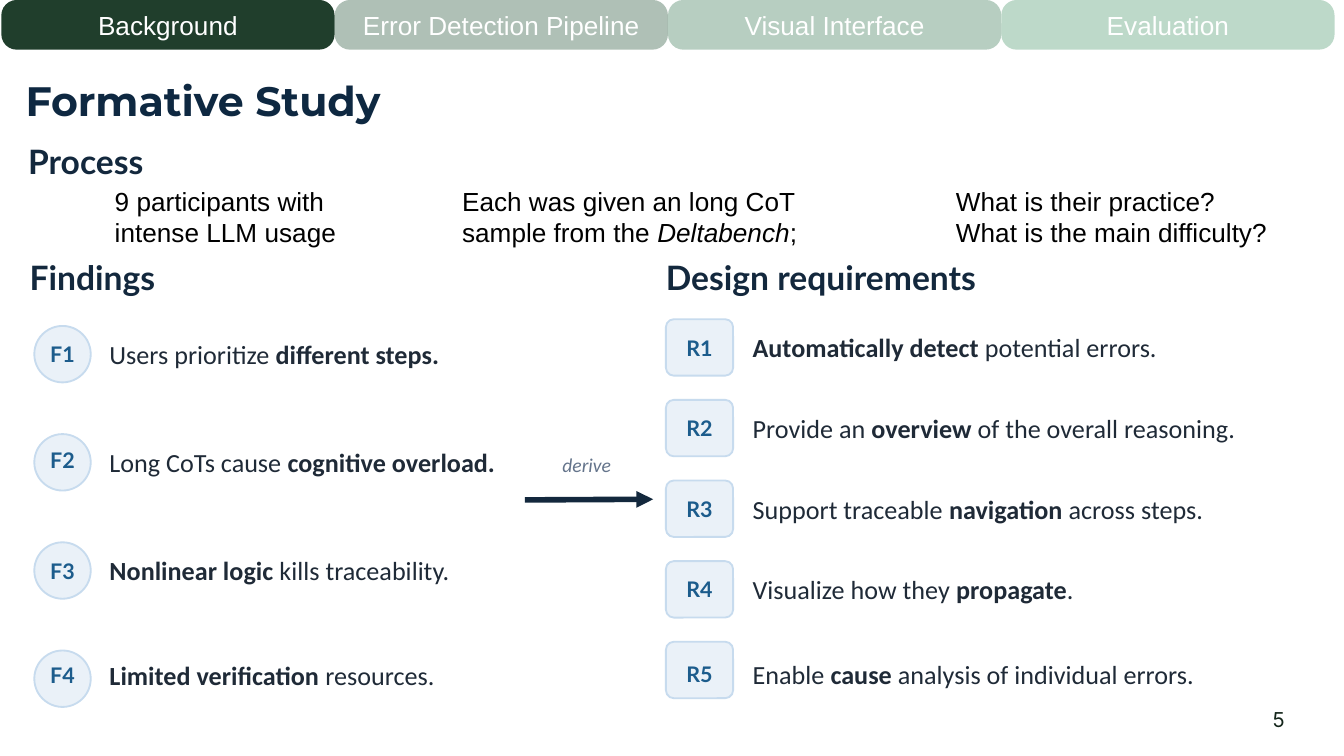
from pptx import Presentation
from pptx.dml.color import RGBColor as Rgb
from pptx.enum.shapes import MSO_CONNECTOR as Link, MSO_SHAPE as Kind
from pptx.enum.text import MSO_ANCHOR as Anchor, MSO_AUTO_SIZE as Fit, PP_ALIGN as Align
from pptx.oxml.ns import qn
from pptx.util import Pt
from lxml.etree import SubElement as Sub

PX = 4572
HUES = {
    "ink": "13283D", "title": "0E2841", "body": "1F2A37", "label": "1C5C8C",
    "badge": "EAF1F8", "edge": "C7DBEE", "note": "64748B", "page": "14261B",
    "black": "000000", "white": "FFFFFF",
    "tab1": "203E2C", "tab2": "376349", "tab3": "4B8664", "tab4": "5AA278",
}


def write(shape, text, face, size, hue, style="", pad=(0, 0, 0, 0), mid=False, top=False):
    frame = shape.text_frame
    frame.word_wrap = True
    frame.auto_size = Fit.SHAPE_TO_FIT_TEXT if top else Fit.NONE
    frame.vertical_anchor = Anchor.TOP if top else Anchor.MIDDLE
    frame.margin_left, frame.margin_top, frame.margin_right, frame.margin_bottom = [p * PX for p in pad]
    for n, line in enumerate(text.split("\n")):
        para = frame.add_paragraph() if n else frame.paragraphs[0]
        para.alignment = Align.CENTER if mid else Align.LEFT
        for k, part in enumerate(line.split("*")):
            if not part:
                continue
            run = para.add_run()
            run.text = part
            font = run.font
            font.name, font.size = face, Pt(size)
            font.color.rgb = Rgb.from_string(HUES[hue])
            font.bold = style == "bold" or (style == "mark" and k % 2 == 1)
            font.italic = style == "slant" or (style == "lean" and k % 2 == 1)


def draw(kind, x, y, w, h, fill, edge=None, bend=None):
    shape = slide.shapes.add_shape(kind, x * PX, y * PX, w * PX, h * PX)
    shape.shadow.inherit = False
    shape.fill.solid()
    shape.fill.fore_color.rgb = Rgb.from_string(HUES[fill])
    if edge:
        shape.line.color.rgb = Rgb.from_string(HUES[edge])
        shape.line.width = Pt(1)
    else:
        shape.line.fill.background()
    if bend:
        shape.adjustments[0] = bend
    return shape


deck = Presentation()
deck.slide_width, deck.slide_height = 2000 * PX, 1125 * PX
slide = deck.slides.add_slide(deck.slide_layouts[5])

title = slide.shapes.title
title.left, title.top, title.width, title.height = [v * PX for v in (38, 78, 560, 142)]
write(title, "Formative Study", "Montserrat", 22, "title", "bold")

tabs = ["Background", "Error Detection Pipeline", "Visual Interface", "Evaluation"]
for i, name in enumerate(tabs):
    tab = draw(Kind.ROUNDED_RECTANGLE, 2 + 496 * i, 0, 496, 74, f"tab{i + 1}", bend=0.31)
    write(tab, name, "Arial", 14, "white", pad=(20, 10, 20, 10), mid=True)
    if i:
        tint = tab._element.spPr.find(qn("a:solidFill"))[0]
        Sub(tint, qn("a:alpha"), val="40000")

heads = [("Process", 42, 208, 202), ("Findings", 44, 380, 202), ("Design requirements", 991, 380, 766)]
for text, x, y, w in heads:
    box = slide.shapes.add_textbox(x * PX, y * PX, w * PX, 64 * PX)
    write(box, text, "Lato", 18, "ink", "bold")

steps = [
    ("9 participants with intense LLM usage", 151, 444),
    ("Each was given an long CoT sample from the *Deltabench*;", 668, 560),
    ("What is their practice?\nWhat is the main difficulty?", 1403, 560),
]
for text, x, w in steps:
    box = slide.shapes.add_textbox(x * PX, 266 * PX, w * PX, 114 * PX)
    write(box, text, "Arial", 14, "black", "lean", pad=(20, 10, 20, 10), top=True)

finds = [
    "Users prioritize *different steps.*",
    "Long CoTs cause *cognitive overload.*",
    "*Nonlinear logic *kills traceability.",
    "*Limited verification *resources.",
]
needs = [
    "*Automatically detect* potential errors.",
    "Provide an *overview* of the overall reasoning.",
    "Support traceable *navigation* across steps.",
    "Visualize how they *propagate*.",
    "Enable *cause* analysis of individual errors.",
]
lists = [
    ("F", finds, Kind.OVAL, None, 51, 84, 485, 161, 163, 668, {1: -4, 3: -6}, {3: -6}),
    ("R", needs, Kind.ROUNDED_RECTANGLE, 0.14, 991, 100, 475, 120, 1120, 876, {4: 6}, {4: 6}),
]
for mark, rows, kind, bend, x, w, first, pitch, left, wide, lifts, shifts in lists:
    for i, text in enumerate(rows):
        y = first + i * pitch
        lift = lifts.get(i, 0)
        badge = draw(kind, x, y, w, 84, "badge", "edge", bend)
        pad = (0, max(0, 2 * lift), 0, max(0, -2 * lift))
        write(badge, f"{mark}{i + 1}", "Lato", 11.5, "label", "bold", pad, mid=True)
        box = slide.shapes.add_textbox(left * PX, (y - 8 + shifts.get(i, 0)) * PX, wide * PX, 100 * PX)
        write(box, text, "Calibri", 14, "body", "mark")

arrow = slide.shapes.add_connector(Link.STRAIGHT, 781 * PX, 744 * PX, 972 * PX, 743 * PX)
arrow.line.color.rgb = Rgb.from_string(HUES["ink"])
arrow.line.width = Pt(3)
frame = arrow._element.spPr
Sub(frame.find(qn("a:ln")), qn("a:tailEnd"), type="triangle")
Sub(frame, qn("a:effectLst"))

note = slide.shapes.add_textbox(778 * PX, 661 * PX, 190 * PX, 60 * PX)
write(note, "derive", "Calibri", 10.5, "note", "slant", mid=True)

page = slide.shapes.add_textbox(1843 * PX, 1039 * PX, 120 * PX, 64 * PX)
write(page, "5", "Inter", 11, "page", mid=True)

deck.save("out.pptx")
